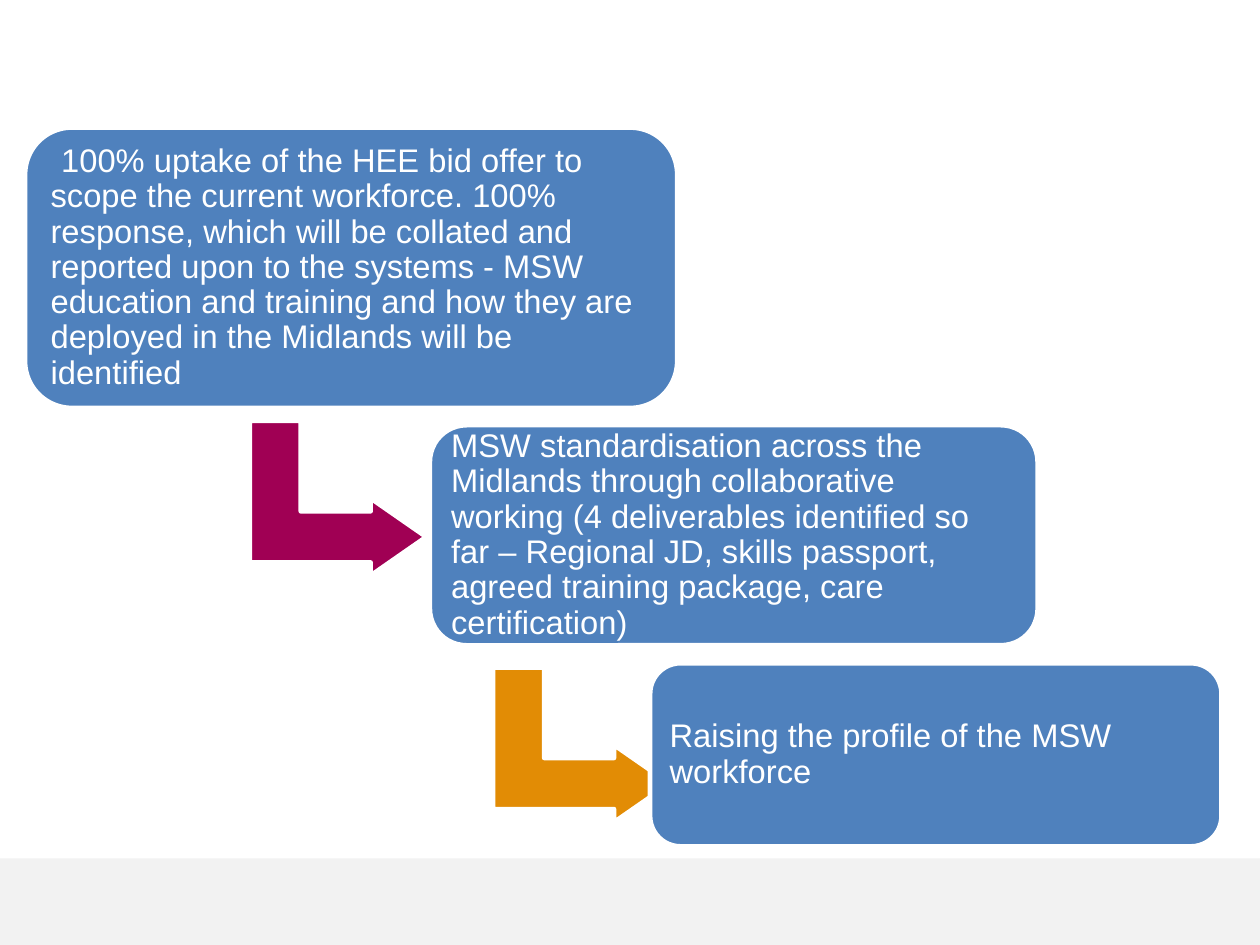
from pptx import Presentation
from pptx.dml.color import RGBColor
from pptx.enum.shapes import MSO_SHAPE as Kind
from pptx.enum.text import MSO_ANCHOR as Anchor, PP_ALIGN as Align
from pptx.util import Cm, Pt

WHITE = RGBColor(0xFF, 0xFF, 0xFF)
GREY = RGBColor(0xF2, 0xF2, 0xF2)
BLUE = RGBColor(0x4F, 0x81, 0xBD)
PLUM = RGBColor(0xA0, 0x00, 0x54)
AMBER = RGBColor(0xE2, 0x8C, 0x05)

deck = Presentation()
deck.slide_width, deck.slide_height = Cm(19.05), Cm(14.29)
slide = deck.slides.add_slide(deck.slide_layouts[6])


def add_block(kind, box, fill):
    """Add a shape with a solid fill and a white outline; box is in cm."""
    block = slide.shapes.add_shape(kind, *[Cm(n) for n in box])
    block.shadow.inherit = False
    block.fill.solid()
    block.fill.fore_color.rgb = fill
    block.line.color.rgb = WHITE
    block.line.width = Pt(2)
    return block


band = add_block(Kind.RECTANGLE, (0, 12.98, 19.05, 1.31), GREY)
band.line.fill.background()

for left, top, fill in [(3.94, 6.2, PLUM), (7.62, 9.93, AMBER)]:
    arrow = add_block(Kind.BENT_UP_ARROW, (left, top, 2.34, 2.67), fill)
    arrow.rotation = 90
    for i, ratio in enumerate((0.33, 0.25, 0.36)):
        arrow.adjustments[i] = ratio

# Box, text inset, first-line indent, text
cards = [
    ((0.38, 1.93, 9.86, 4.24), 0.18, 0.16,
     "100% uptake of the HEE bid offer to scope the current workforce. "
     "100% response, which will be collated and reported upon to the "
     "systems - MSW education and training and how they are deployed "
     "in the Midlands will be identified"),
    ((6.5, 6.43, 9.19, 3.33), 0.16, 0,
     "MSW standardisation across the Midlands through collaborative "
     "working (4 deliverables identified so far – Regional JD, skills "
     "passport, agreed training package, care certification)"),
    ((9.83, 10.03, 8.64, 2.77), 0.16, 0,
     "Raising the profile of the MSW workforce"),
]
for box, inset, indent, text in cards:
    card = add_block(Kind.ROUNDED_RECTANGLE, box, BLUE)
    frame = card.text_frame
    frame.word_wrap = True
    frame.vertical_anchor = Anchor.MIDDLE
    frame.margin_left = frame.margin_right = Cm(inset)
    frame.margin_top = frame.margin_bottom = Cm(inset)
    para = frame.paragraphs[0]
    para.alignment = Align.LEFT
    para.line_spacing = 0.9
    if indent:
        para._p.get_or_add_pPr().set("indent", str(Cm(indent)))
    run = para.add_run()
    run.text = text
    run.font.name = "Arial"
    run.font.size = Pt(14)
    run.font.color.rgb = WHITE

deck.save("out.pptx")
